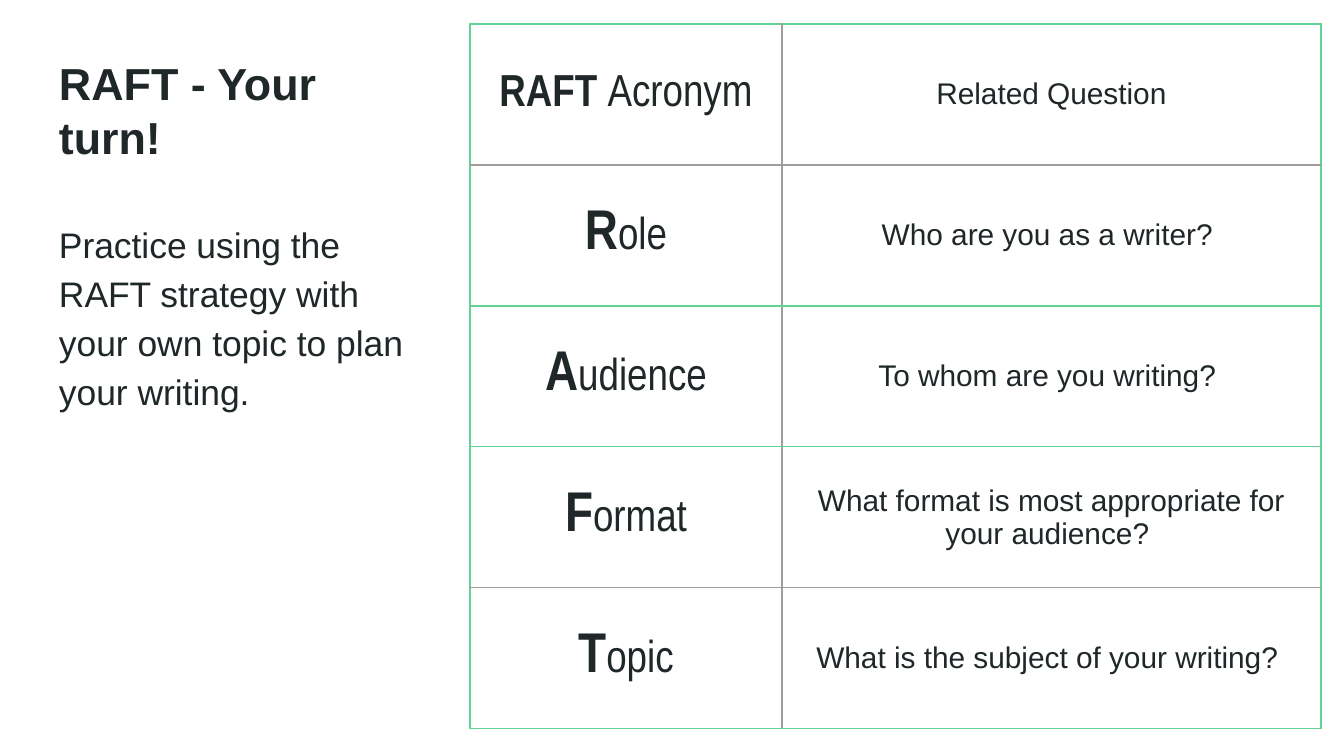
import pptx
import pptx.dml.color
import pptx.enum.text
import pptx.oxml
import pptx.oxml.ns
import pptx.util

EMU_PER_PX = 914400 / 134.4
INK, GREEN, GRAY = "202729", "63D297", "9E9E9E"
INSET = 13
ROW_HEIGHT = 141
COLUMN_WIDTHS = (312, 539)

# Bold lead, its size, rest of the term, question
ROWS = [
    ("RAFT ", 24, "Acronym", "Related Question"),
    ("R", 30, "ole", "Who are you as a writer? "),
    ("A", 30, "udience", "To whom are you writing? "),
    ("F", 30, "ormat", "What format is most appropriate for your audience? "),
    ("T", 30, "opic", "What is the subject of your writing? "),
]


def px(n):
    return pptx.util.Emu(round(n * EMU_PER_PX))


def rgb(color):
    return pptx.dml.color.RGBColor.from_string(color)


def style_run(r, size, font="Arial", bold=False):
    r.font.size = pptx.util.Pt(size)
    r.font.name = font
    r.font.bold = bold
    r.font.color.rgb = rgb(INK)


def set_insets(box):
    box.margin_left = box.margin_right = px(INSET)
    box.margin_top = box.margin_bottom = px(INSET)


def add_text(s, text, left, top, width, height, size, bold=False, anchor="TOP"):
    tf = s.shapes.add_textbox(px(left), px(top), px(width), px(height)).text_frame
    tf.word_wrap = True
    tf.vertical_anchor = pptx.enum.text.MSO_ANCHOR[anchor]
    set_insets(tf)
    tf.text = text
    p = tf.paragraphs[0]
    style_run(p.runs[0], size, bold=bold)
    return p


def set_borders(cell, colors):
    """Draw the left, right, top and bottom borders in the given colors."""
    tc_pr = cell._tc.get_or_add_tcPr()
    for i, (side, color) in enumerate(zip("LRTB", colors)):
        line = pptx.oxml.parse_xml(
            f'<a:ln{side} {pptx.oxml.ns.nsdecls("a")} w="9525"><a:solidFill>'
            f'<a:srgbClr val="{color}"/></a:solidFill></a:ln{side}>')
        tc_pr.insert(i, line)


def fill_cell(cell, runs):
    """Write centred runs, each given as text, size, font and bold."""
    cell.fill.background()
    cell.vertical_anchor = pptx.enum.text.MSO_ANCHOR.MIDDLE
    set_insets(cell)
    p = cell.text_frame.paragraphs[0]
    p.alignment = pptx.enum.text.PP_ALIGN.CENTER
    for text, size, font, bold in runs:
        r = p.add_run()
        r.text = text
        style_run(r, size, font, bold)


def add_raft_table(s, left, top):
    table = s.shapes.add_table(
        len(ROWS), len(COLUMN_WIDTHS), px(left), px(top),
        px(sum(COLUMN_WIDTHS)), px(ROW_HEIGHT * len(ROWS))).table
    table.first_row = table.horz_banding = False
    for column, width in zip(table.columns, COLUMN_WIDTHS):
        column.width = px(width)

    # Horizontal rules from top to bottom
    rules = [GREEN, GRAY, GREEN, GREEN, GRAY, GREEN]
    for i, (lead, lead_size, rest, question) in enumerate(ROWS):
        table.rows[i].height = px(ROW_HEIGHT)
        term, answer = table.cell(i, 0), table.cell(i, 1)
        fill_cell(term, [(lead, lead_size, "Arial Narrow", True),
                         (rest, 24, "Arial Narrow", False)])
        fill_cell(answer, [(question, 16, "Arial", False)])
        set_borders(term, (GREEN, GRAY, rules[i], rules[i + 1]))
        set_borders(answer, (GRAY, GREEN, rules[i], rules[i + 1]))


def main():
    prs = pptx.Presentation()
    prs.slide_width, prs.slide_height = px(1344), px(756)
    s = prs.slides.add_slide(prs.slide_layouts[6])

    # Title and instructions
    add_text(s, "RAFT - Your turn!", 46, 64, 394, 112, 24, bold=True, anchor="BOTTOM")
    p = add_text(s, "Practice using the RAFT strategy with your own topic to plan "
                 "your writing. ", 46, 204, 394, 487, 19)
    p.line_spacing = 1.15
    p.space_after = pptx.util.Pt(12)

    # Acronym table
    add_raft_table(s, 470, 24)
    prs.save("out.pptx")


if __name__ == "__main__":
    main()
